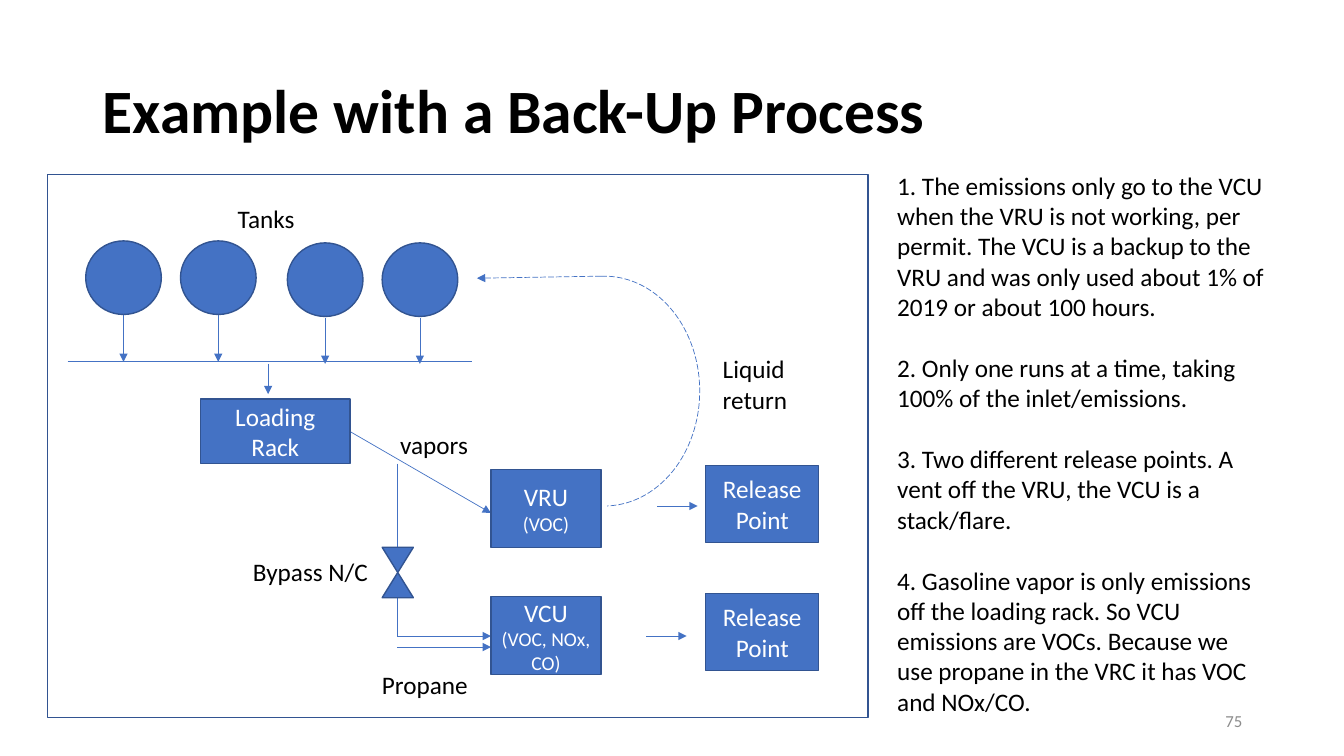
import pptx
import pptx.util
import pptx.dml.color
import pptx.enum.dml
import pptx.enum.shapes
import pptx.enum.text
import pptx.oxml

Inches = pptx.util.Inches
Pt = pptx.util.Pt
RGBColor = pptx.dml.color.RGBColor
Shape = pptx.enum.shapes.MSO_SHAPE
Align = pptx.enum.text.PP_ALIGN
Anchor = pptx.enum.text.MSO_ANCHOR
DASH = pptx.enum.dml.MSO_LINE.LONG_DASH

BLUE = RGBColor(0x44, 0x72, 0xC4)
NAVY = RGBColor(0x32, 0x54, 0x91)
BLACK = RGBColor(0, 0, 0)
WHITE = RGBColor(255, 255, 255)
GRAY = RGBColor(0x8C, 0x8C, 0x8C)

NOTES = [
    "1. The emissions only go to the VCU when the VRU is not working, per permit. "
    "The VCU is a backup to the VRU and was only used about 1% of 2019 or about 100 hours.",
    "2. Only one runs at a time, taking 100% of the inlet/emissions.",
    "3. Two different release points. A vent off the VRU, the VCU is a stack/flare.",
    "4. Gasoline vapor is only emissions off the loading rack. So VCU emissions are VOCs. "
    "Because we use propane in the VRC it has VOC and NOx/CO.",
]


def style(item, form):
    for name, value in form.items():
        setattr(item, name, value)


def add_run(para, text, size=18, color=BLACK, bold=False):
    run = para.add_run()
    run.text = text
    style(run.font, {"name": "Calibri", "size": Pt(size), "bold": bold})
    run.font.color.rgb = color


def add_text(slide, box, lines, size=18, color=BLACK, align=Align.LEFT,
             anchor=Anchor.TOP):
    frame = slide.shapes.add_textbox(*map(Inches, box)).text_frame
    style(frame, {"word_wrap": True, "vertical_anchor": anchor})
    for i, line in enumerate(lines):
        para = frame.add_paragraph() if i else frame.paragraphs[0]
        style(para, {"alignment": align, "space_before": Pt(22 if i else 0)})
        add_run(para, line, size, color)


def add_form(slide, kind, box, fill=BLUE, line=NAVY, width=1):
    form = slide.shapes.add_shape(kind, *map(Inches, box))
    form.shadow.inherit = False
    if fill is None:
        form.fill.background()
    else:
        form.fill.solid()
        form.fill.fore_color.rgb = fill
    form.line.color.rgb = line
    form.line.width = Pt(width)
    return form


def add_unit(slide, box, name, gases=""):
    frame = add_form(slide, Shape.RECTANGLE, box).text_frame
    style(frame, {"word_wrap": True, "vertical_anchor": Anchor.MIDDLE})
    para = frame.paragraphs[0]
    para.alignment = Align.CENTER
    add_run(para, name, 18, WHITE)
    if gases:
        add_run(para, gases, 14, WHITE)


def add_line(slide, start, end, head=True, width=0.5, dash=None):
    link = slide.shapes.add_connector(
        pptx.enum.shapes.MSO_CONNECTOR.STRAIGHT, *map(Inches, start + end))
    link.line.color.rgb = BLUE
    style(link.line, {"width": Pt(width), "dash_style": dash})
    props = link._element.spPr
    if head:
        tip = pptx.oxml.parse_xml(
            '<a:tailEnd xmlns:a="http://schemas.openxmlformats.org/drawingml/2006/main"'
            ' type="triangle"/>')
        link.line._get_or_add_ln().append(tip)
    props.append(pptx.oxml.parse_xml(
        '<a:effectLst xmlns:a="http://schemas.openxmlformats.org/drawingml/2006/main"/>'))


def add_title(slide, text):
    title = slide.shapes.title
    style(title, {"left": Inches(0.92), "top": Inches(0.4),
                  "width": Inches(11.5), "height": Inches(1.45)})
    title.text_frame.vertical_anchor = Anchor.MIDDLE
    para = title.text_frame.paragraphs[0]
    style(para, {"alignment": Align.LEFT, "line_spacing": 0.9})
    add_run(para, text, 44, bold=True)


def add_tank(slide, left, top):
    add_form(slide, Shape.OVAL, (left, top, 0.75, 0.73))
    mid = left + 0.375
    add_line(slide, (mid, top + 0.74), (mid, top + 1.2))


def main():
    deck = pptx.Presentation()
    style(deck, {"slide_width": Inches(13.33), "slide_height": Inches(7.5)})
    slide = deck.slides.add_slide(deck.slide_layouts[5])
    add_title(slide, "Example with a Back-Up Process")
    add_form(slide, Shape.RECTANGLE, (0.47, 1.73, 8.14, 5.39), fill=None)

    # Tanks, in two pairs, and their header line
    for left, top in ((0.85, 2.39), (2.85, 2.41)):
        for step in range(2):
            add_tank(slide, left + 0.94 * step, top)
    add_line(slide, (0.67, 3.59), (4.68, 3.59), head=False)
    add_line(slide, (2.66, 3.61), (2.66, 3.91))

    # Vapor lines and bypass valve
    add_line(slide, (3.47, 4.28), (4.87, 5.09))
    add_line(slide, (3.94, 4.6), (3.94, 6.31), head=False, width=0.75)
    add_form(slide, Shape.FLOWCHART_COLLATE, (3.79, 5.43, 0.31, 0.5))
    for y in (6.31, 6.42):
        add_line(slide, (3.94, y), (4.87, y))

    # Process units and release points
    add_unit(slide, (1.99, 3.96, 1.48, 0.64), "Loading Rack")
    add_unit(slide, (4.87, 4.66, 1.09, 0.77), "VRU ", "(VOC)")
    add_unit(slide, (4.87, 5.92, 1.09, 0.77), "VCU ", "(VOC, NOx, CO)")
    for x, y, top in ((6.52, 5.02, 4.62), (6.41, 6.31, 5.89)):
        add_line(slide, (x, y), (x + 0.4, y))
        add_unit(slide, (7, top, 1.12, 0.76), "Release Point")

    # Liquid return
    arc = add_form(slide, Shape.ARC, (5.05, 2.74, 1.89, 2.28), None, BLUE, 0.5)
    arc.line.dash_style = DASH
    for i, turn in enumerate((161.02, 53.21)):
        arc.adjustments[i] = turn
    add_line(slide, (5.96, 2.74), (4.73, 2.76), dash=DASH)

    # Labels
    for text, box in (
        ("Tanks", (2.26, 1.97, 0.94, 0.4)),
        ("vapors", (3.87, 4.21, 0.89, 0.4)),
        ("Liquid return", (7.07, 3.46, 0.96, 0.71)),
        ("Bypass N/C", (2.41, 5.47, 1.46, 0.4)),
        ("Propane", (3.69, 6.59, 1.12, 0.4)),
    ):
        add_text(slide, box, [text])

    # Notes column and page number
    add_text(slide, (8.8, 1.64, 3.89, 5.86), NOTES)
    add_text(slide, (9.42, 6.95, 3, 0.4), ["75"], 12, GRAY, Align.RIGHT, Anchor.MIDDLE)
    deck.save("out.pptx")


if __name__ == "__main__":
    main()
